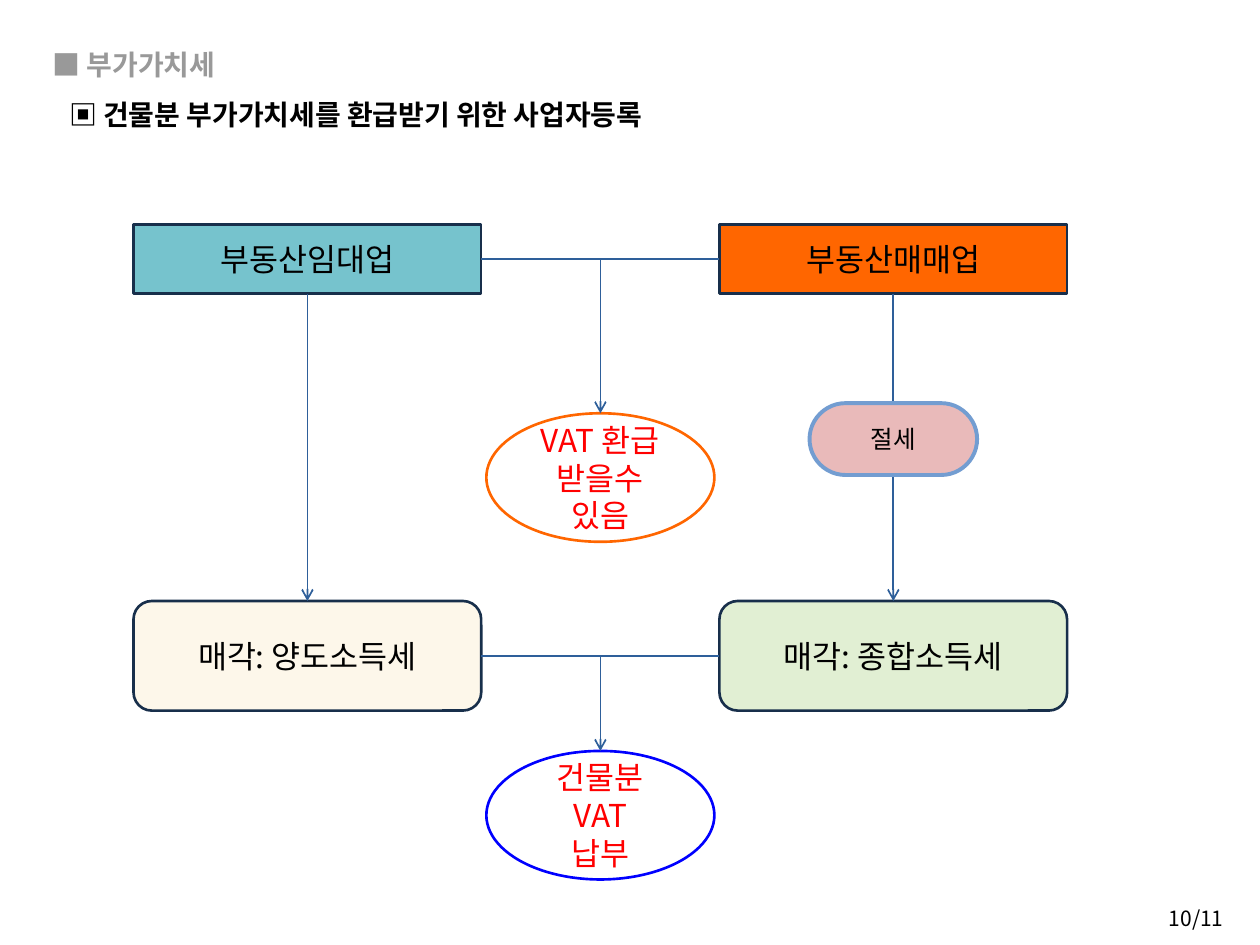
import pptx
import pptx.util
import pptx.dml.color
import pptx.enum.shapes
import pptx.enum.text
import pptx.oxml.ns
from lxml import etree

Inches = pptx.util.Inches
Pt = pptx.util.Pt
KIND = pptx.enum.shapes.MSO_SHAPE
ALIGN = pptx.enum.text.PP_ALIGN
MIDDLE = pptx.enum.text.MSO_ANCHOR.MIDDLE
qn = pptx.oxml.ns.qn

FONT = "Noto Sans CJK KR"
COLORS = {
    "black": "000000", "gray": "999999", "red": "FF0000", "navy": "182F4B",
    "teal": "76C3CD", "orange": "FF6600", "cream": "FDF7EA", "green": "E1EFD3",
    "blue": "0000FF", "wire": "2E5F9A", "pink": "E9BABA", "sky": "739DD1",
}

# Title lines: text, colour, indent
TITLE = [
    ("■ 부가가치세", "gray", 0),
    ("▣ 건물분 부가가치세를 환급받기 위한 사업자등록", "black", 0.13),
]
PAGE = "10/11"

# Columns: left, business, its fill, tax on sale, its fill
COLUMNS = [
    (1.06, "부동산임대업", "teal", "매각: 양도소득세", "cream"),
    (5.71, "부동산매매업", "orange", "매각: 종합소득세", "green"),
]
WIDTH = 2.76
TOP, TOP_H = 1.78, 0.55
SALE, SALE_H = 4.77, 0.87

# Results between the columns: wire height, oval top, lines, outline
RESULTS = [
    (TOP + TOP_H / 2, 3.28, ["VAT 환급", "받을수", "있음"], "orange"),
    (SALE + SALE_H / 2, 5.96, ["건물분", "VAT", "납부"], "blue"),
]
OVAL_W, OVAL_H = 1.81, 1.02
BADGE = "절세"
BADGE_W, BADGE_H, BADGE_TOP = 1.33, 0.57, 3.2


def rgb(name):
    return pptx.dml.color.RGBColor.from_string(COLORS[name])


def style(para, size, color, align, bold=False):
    para.alignment = align
    font = para.font
    font.size, font.bold, font.name = Pt(size), bold, FONT
    font.color.rgb = rgb(color)
    # East Asian glyphs take their font from a separate element
    props = para._p.pPr.find(qn("a:defRPr"))
    etree.SubElement(props, qn("a:ea")).set("typeface", FONT)


def box(slide, left, top, width, height):
    frame = slide.shapes.add_textbox(
        Inches(left), Inches(top), Inches(width), Inches(height)).text_frame
    frame.word_wrap = True
    return frame


def node(slide, kind, area, lines, fill, line, color="black", size=18,
         weight=1.5, round_by=None):
    shape = slide.shapes.add_shape(kind, *map(Inches, area))
    shape.shadow.inherit = False
    if round_by is not None:
        shape.adjustments[0] = round_by
    if fill:
        shape.fill.solid()
        shape.fill.fore_color.rgb = rgb(fill)
    else:
        shape.fill.background()
    shape.line.color.rgb = rgb(line)
    shape.line.width = Pt(weight)
    frame = shape.text_frame
    frame.word_wrap = True
    frame.vertical_anchor = MIDDLE
    frame.text = "\n".join(lines)
    for para in frame.paragraphs:
        style(para, size, color, ALIGN.CENTER)


def wire(slide, start, end, arrow=False):
    link = slide.shapes.add_connector(
        pptx.enum.shapes.MSO_CONNECTOR.STRAIGHT, *map(Inches, start + end))
    link.line.color.rgb = rgb("wire")
    link.line.width = Pt(1)
    if arrow:
        etree.SubElement(link.line._get_or_add_ln(),
                         qn("a:tailEnd")).set("type", "arrow")
    etree.SubElement(link._element.spPr, qn("a:effectLst"))


def main():
    deck = pptx.Presentation()
    deck.slide_width, deck.slide_height = Inches(10), Inches(7.5)
    slide = deck.slides.add_slide(deck.slide_layouts[6])

    title = box(slide, 0.32, 0.21, 9.37, 0.87)
    title.vertical_anchor = MIDDLE
    title.text = "\n".join(text for text, _, _ in TITLE)
    for para, (_, color, indent) in zip(title.paragraphs, TITLE):
        para.line_spacing = 1.5
        style(para, 16, color, ALIGN.LEFT, bold=True)
        para._p.pPr.set("marL", str(Inches(indent)))

    page = box(slide, 9.02, 7.14, 0.79, 0.29)
    page.text = PAGE
    style(page.paragraphs[0], 12, "black", ALIGN.RIGHT)

    for left, trade, trade_fill, tax, tax_fill in COLUMNS:
        node(slide, KIND.RECTANGLE, (left, TOP, WIDTH, TOP_H),
             [trade], trade_fill, "navy")
        node(slide, KIND.ROUNDED_RECTANGLE, (left, SALE, WIDTH, SALE_H),
             [tax], tax_fill, "navy", round_by=0.167)
        center = left + WIDTH / 2
        wire(slide, (center, TOP + TOP_H), (center, SALE), arrow=True)

    start, end = COLUMNS[0][0] + WIDTH, COLUMNS[1][0]
    middle = (start + end) / 2
    for level, top, lines, line in RESULTS:
        node(slide, KIND.OVAL, (middle - OVAL_W / 2, top, OVAL_W, OVAL_H),
             lines, None, line, color="red")
        wire(slide, (start, level), (end, level))
        wire(slide, (middle, level), (middle, top), arrow=True)

    # The badge sits on the arrow of the last column
    node(slide, KIND.ROUNDED_RECTANGLE,
         (center - BADGE_W / 2, BADGE_TOP, BADGE_W, BADGE_H),
         [BADGE], "pink", "sky", size=14, weight=2.25, round_by=0.5)

    deck.save("out.pptx")


if __name__ == "__main__":
    main()
